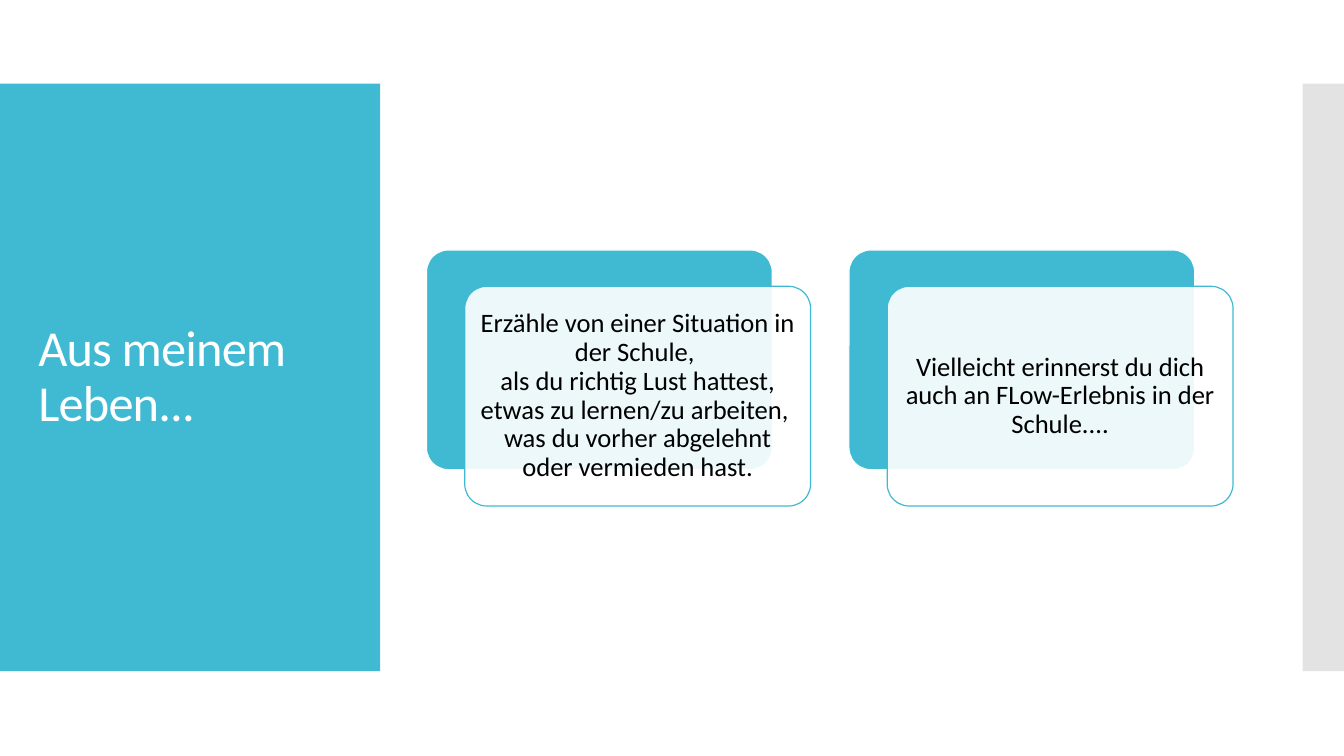
import dataclasses
from typing import Optional

import lxml.etree
import pptx
import pptx.dml.color
import pptx.enum.shapes
import pptx.enum.text
import pptx.oxml.ns
import pptx.util
from pptx.util import Inches

TEAL = pptx.dml.color.RGBColor(0x40, 0xBA, 0xD2)
GREY = pptx.dml.color.RGBColor(0xC8, 0xC8, 0xC8)
WHITE = pptx.dml.color.RGBColor(0xFF, 0xFF, 0xFF)
BLACK = pptx.dml.color.RGBColor(0x00, 0x00, 0x00)

RECTANGLE = pptx.enum.shapes.MSO_SHAPE.RECTANGLE
ROUNDED = pptx.enum.shapes.MSO_SHAPE.ROUNDED_RECTANGLE
LEFT = pptx.enum.text.PP_ALIGN.LEFT
CENTER = pptx.enum.text.PP_ALIGN.CENTER

PANEL_TOP, PANEL_HEIGHT = 0.83, 5.83
CARD_LEFT, CARD_TOP = 4.23, 2.48
CARD_WIDTH, CARD_HEIGHT = 3.43, 2.18
CARD_PITCH = 4.19
FRONT_DX, FRONT_DY = 0.38, 0.36


@dataclasses.dataclass(frozen=True)
class Block:
    left: float
    top: float
    width: float
    height: float
    fill: pptx.dml.color.RGBColor
    line: Optional[pptx.dml.color.RGBColor] = None
    opacity: int = 100
    rounded: bool = False


def draw_block(slide, block: Block):
    shape = slide.shapes.add_shape(
        ROUNDED if block.rounded else RECTANGLE,
        Inches(block.left), Inches(block.top),
        Inches(block.width), Inches(block.height))
    shape.shadow.inherit = False
    if block.rounded:
        shape.adjustments[0] = 0.1
    shape.fill.solid()
    shape.fill.fore_color.rgb = block.fill
    if block.opacity < 100:
        qn = pptx.oxml.ns.qn
        color = shape._element.spPr.find(qn("a:solidFill")).find(qn("a:srgbClr"))
        alpha = lxml.etree.SubElement(color, qn("a:alpha"))
        alpha.set("val", str(block.opacity * 1000))
    if block.line is None:
        shape.line.fill.background()
    else:
        shape.line.color.rgb = block.line
        shape.line.width = pptx.util.Pt(0.85)
    return shape


def write_text(shape, text: str, *, size: float, color: pptx.dml.color.RGBColor,
               align, inset_x: float, inset_y: float, spacing: float = 0) -> None:
    frame = shape.text_frame
    frame.word_wrap = True
    frame.auto_size = pptx.enum.text.MSO_AUTO_SIZE.NONE
    frame.vertical_anchor = pptx.enum.text.MSO_ANCHOR.MIDDLE
    frame.margin_left = frame.margin_right = Inches(inset_x)
    frame.margin_top = frame.margin_bottom = Inches(inset_y)
    paragraph = frame.paragraphs[0]
    paragraph.text = text
    paragraph.alignment = align
    paragraph.line_spacing = 0.9
    for run in paragraph.runs:
        run.font.name = "Calibri"
        run.font.size = pptx.util.Pt(size)
        run.font.color.rgb = color
        if spacing:
            run.font._element.set("spc", str(round(spacing * 100)))


def draw_card(slide, left: float, text: str) -> None:
    back = Block(left, CARD_TOP, CARD_WIDTH, CARD_HEIGHT, TEAL, WHITE, rounded=True)
    front = dataclasses.replace(
        back, left=left + FRONT_DX, top=CARD_TOP + FRONT_DY,
        fill=WHITE, line=TEAL, opacity=90)
    draw_block(slide, back)
    write_text(draw_block(slide, front), text, size=19, color=BLACK,
               align=CENTER, inset_x=0.08, inset_y=0.08)


def main() -> None:
    presentation = pptx.Presentation()
    presentation.slide_width = Inches(13.33)
    presentation.slide_height = Inches(7.5)
    slide = presentation.slides.add_slide(presentation.slide_layouts[5])

    draw_block(slide, Block(0, PANEL_TOP, 3.77, PANEL_HEIGHT, TEAL))
    draw_block(slide, Block(12.92, PANEL_TOP, 0.41, PANEL_HEIGHT, GREY, opacity=50))

    heading = slide.shapes.title
    heading.left, heading.top = Inches(0.28), Inches(1.23)
    heading.width, heading.height = Inches(3.22), Inches(5.03)
    write_text(heading, "Aus meinem Leben...", size=36, color=WHITE,
               align=LEFT, inset_x=0.1, inset_y=0.05, spacing=-0.6)
    slide.shapes._spTree.append(heading._element)

    prompts = (
        "Erzähle von einer Situation in der Schule, \v"
        "als du richtig Lust hattest, etwas zu lernen/zu arbeiten, \v"
        "was du vorher abgelehnt oder vermieden hast.",
        "Vielleicht erinnerst du dich auch an FLow-Erlebnis in der Schule....",
    )
    for index, prompt in enumerate(prompts):
        draw_card(slide, CARD_LEFT + index * CARD_PITCH, prompt)

    presentation.save("out.pptx")


if __name__ == "__main__":
    main()
